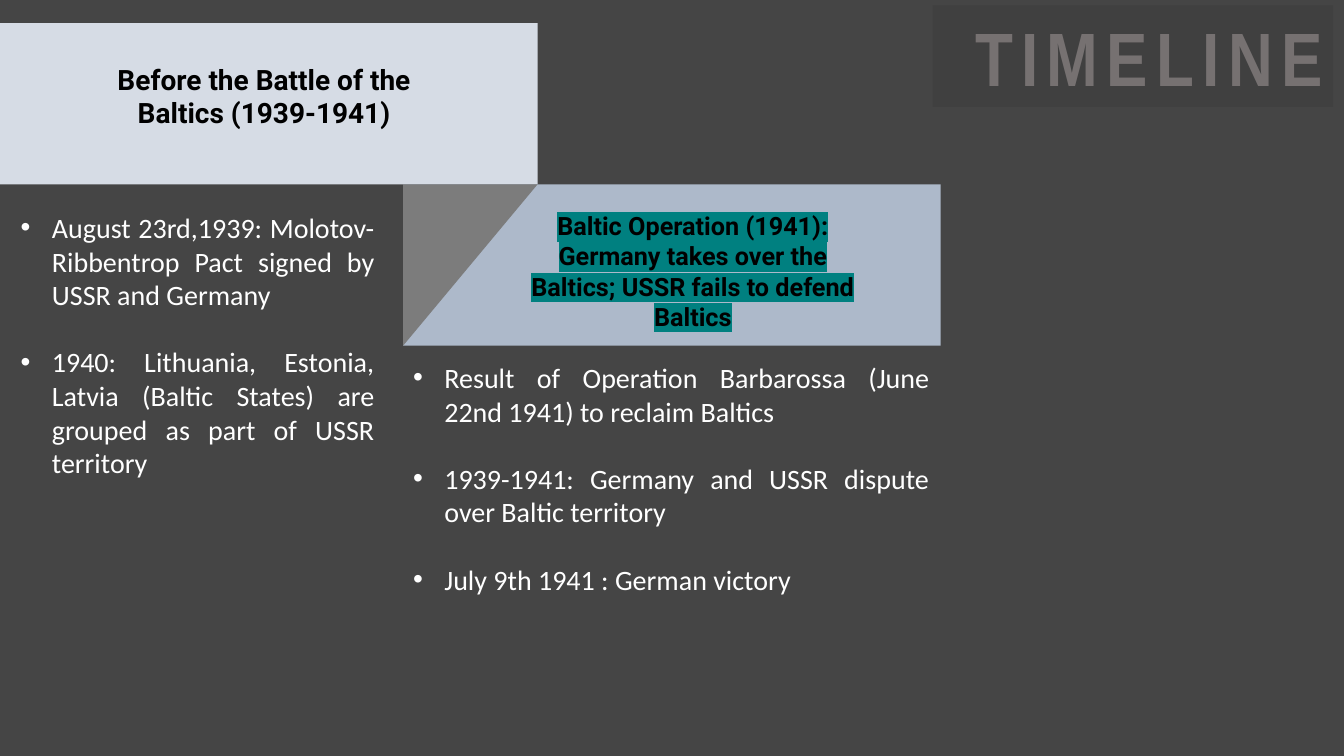
from lxml import etree
from pptx import Presentation
from pptx import util as u
from pptx.dml.color import RGBColor
from pptx.enum import shapes, text
from pptx.oxml.ns import qn

BACKGROUND = RGBColor(0x45, 0x45, 0x45)
PALE_BLUE = RGBColor(0xD6, 0xDC, 0xE5)
MID_BLUE = RGBColor(0xAD, 0xB9, 0xCA)
FOLD_GRAY = RGBColor(0x7C, 0x7C, 0x7C)
TITLE_FILL = RGBColor(0x40, 0x40, 0x40)
TITLE_GRAY = RGBColor(0x76, 0x71, 0x71)
BLACK = RGBColor(0, 0, 0)
WHITE = RGBColor(0xFF, 0xFF, 0xFF)
TEAL = RGBColor(0, 0x80, 0x80)

WIDTH, HEIGHT = 13.33, 7.5
COLUMN = WIDTH / 10
ROW = 1.6
TOP = 0.23

HEADING = {"name": "Roboto", "size": u.Pt(20), "bold": True}
BODY = {"name": "Calibri", "size": u.Pt(20)}
TITLE = {"name": "Arial Narrow", "size": u.Pt(54), "bold": True}


class TimelineSlide:
    def __init__(self, presentation):
        self.slide = presentation.slides.add_slide(presentation.slide_layouts[6])
        fill = self.slide.background.fill
        fill.solid()
        fill.fore_color.rgb = BACKGROUND

    def place(self, column, row, columns, rows):
        """Turn grid units into left, top, width and height."""
        inches = (column * COLUMN, TOP + row * ROW, columns * COLUMN, rows * ROW)
        return [u.Inches(length) for length in inches]

    def block(self, kind, cell, color):
        shape = self.slide.shapes.add_shape(kind, *self.place(*cell))
        shape.shadow.inherit = False
        shape.fill.solid()
        shape.fill.fore_color.rgb = color
        shape.line.fill.background()
        return shape

    def text_box(self, cell):
        box = self.slide.shapes.add_textbox(*self.place(*cell))
        box.text_frame.word_wrap = True
        return box.text_frame

    def add_words(self, paragraph, words, style, color, alignment):
        paragraph.alignment = alignment
        run = paragraph.add_run()
        run.text = words
        for name, value in style.items():
            setattr(run.font, name, value)
        run.font.color.rgb = color
        return run

    def heading(self, cell, words, size=20, highlight=None):
        paragraph = self.text_box(cell).paragraphs[0]
        style = HEADING | {"size": u.Pt(size)}
        run = self.add_words(paragraph, words, style, BLACK, text.PP_ALIGN.CENTER)
        if highlight is not None:
            mark = etree.Element(qn("a:highlight"))
            etree.SubElement(mark, qn("a:srgbClr"), val=str(highlight))
            run.font._element.find(qn("a:solidFill")).addnext(mark)

    def bullets(self, cell, items):
        frame = self.text_box(cell)
        for index, item in enumerate(items):
            paragraph = frame.add_paragraph() if index else frame.paragraphs[0]
            self.add_words(paragraph, item, BODY, WHITE, text.PP_ALIGN.JUSTIFY)
            if index:
                paragraph.space_before = u.Pt(24)
            properties = paragraph._p.get_or_add_pPr()
            indent = u.Inches(0.31)
            properties.set("marL", str(indent))
            properties.set("indent", str(-indent))
            etree.SubElement(properties, qn("a:buFont"), typeface="Arial")
            etree.SubElement(properties, qn("a:buChar"), char="•")

    def title(self, cell, words):
        shape = self.block(shapes.MSO_SHAPE.RECTANGLE, cell, TITLE_FILL)
        frame = shape.text_frame
        frame.vertical_anchor = text.MSO_ANCHOR.MIDDLE
        run = self.add_words(frame.paragraphs[0], words, TITLE, TITLE_GRAY, text.PP_ALIGN.RIGHT)
        run.font._element.set("spc", "600")


def main():
    presentation = Presentation()
    presentation.slide_width = u.Inches(WIDTH)
    presentation.slide_height = u.Inches(HEIGHT)
    timeline = TimelineSlide(presentation)

    timeline.block(shapes.MSO_SHAPE.RECTANGLE, (0, 0, 4, 1), PALE_BLUE)
    timeline.block(shapes.MSO_SHAPE.RECTANGLE, (3, 1, 4, 1), MID_BLUE)
    fold = timeline.block(shapes.MSO_SHAPE.RIGHT_TRIANGLE, (3, 1, 1, 1), FOLD_GRAY)
    fold._element.spPr.xfrm.set("flipV", "1")

    timeline.heading((0.59, 0.21, 2.75, 0.86), "Before the Battle of the Baltics (1939-1941)")
    timeline.heading(
        (3.81, 1.13, 2.69, 0.82),
        "Baltic Operation (1941): Germany takes over the Baltics; USSR fails to defend Baltics",
        size=18,
        highlight=TEAL,
    )
    timeline.title((6.94, -0.11, 2.98, 0.63), "TIMELINE")

    timeline.bullets((3, 2.06, 3.99, 1.73), [
        "Result of Operation Barbarossa (June 22nd 1941) to reclaim Baltics",
        "1939-1941: Germany and USSR dispute over Baltic territory",
        "July 9th 1941 : German victory",
    ])
    timeline.bullets((0.08, 1.13, 2.78, 2.13), [
        "August 23rd,1939: Molotov-Ribbentrop Pact signed by USSR and Germany",
        "1940: Lithuania, Estonia, Latvia (Baltic States) are grouped as part of USSR territory",
    ])
    presentation.save("out.pptx")


if __name__ == "__main__":
    main()
